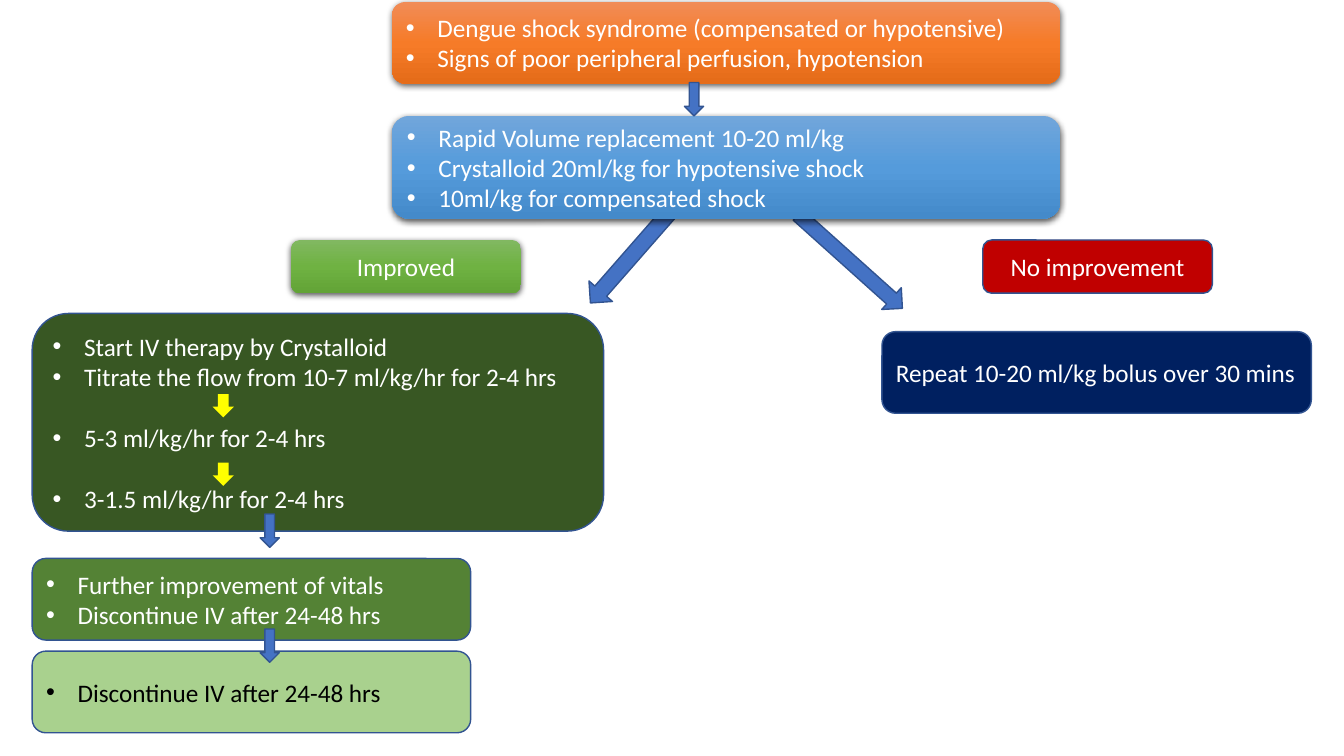
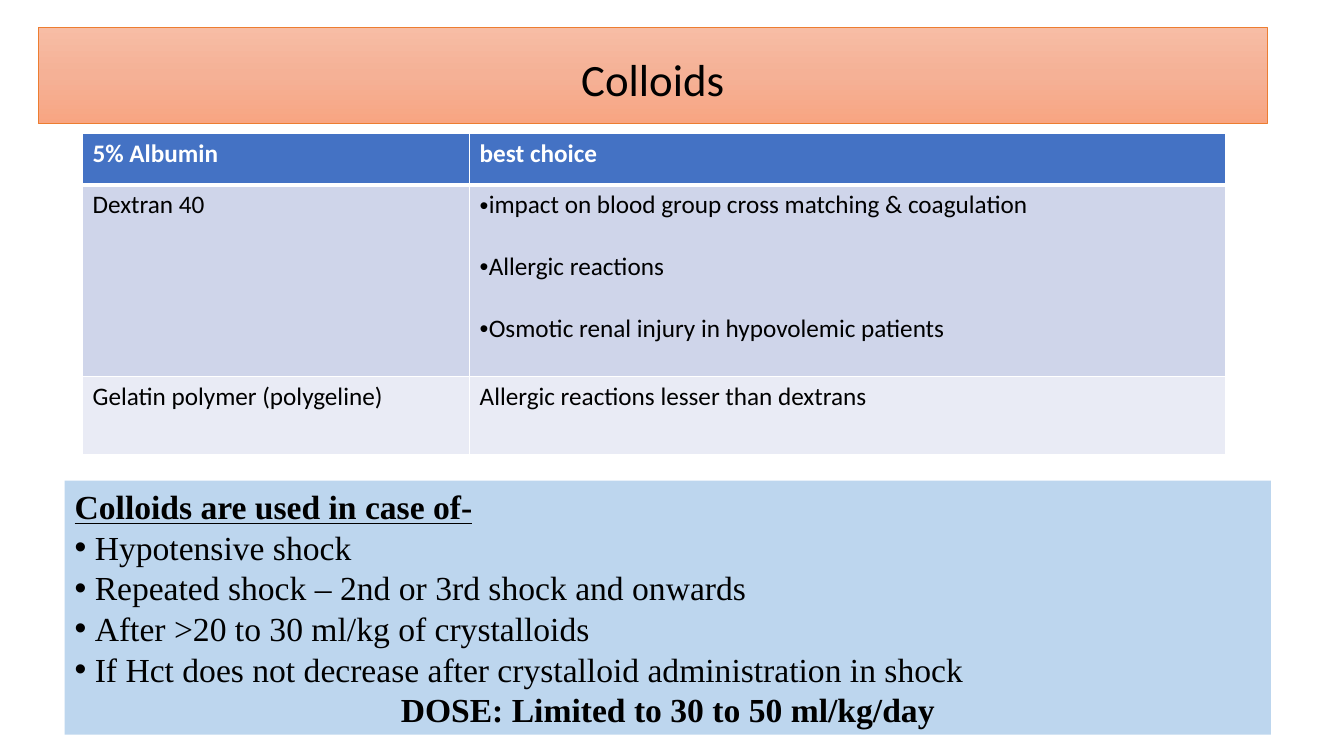
from lxml import etree
from copy import deepcopy
from pptx import Presentation
from pptx.dml.color import RGBColor
from pptx.enum.shapes import MSO_SHAPE
from pptx.enum.text import MSO_ANCHOR, MSO_AUTO_SIZE, PP_ALIGN
from pptx.oxml import parse_xml
from pptx.oxml.ns import qn
from pptx.util import Pt

ROUNDED, DOWN_ARROW = MSO_SHAPE.ROUNDED_RECTANGLE, MSO_SHAPE.DOWN_ARROW
LEFT, CENTER = PP_ALIGN.LEFT, PP_ALIGN.CENTER
MIDDLE, TOP = MSO_ANCHOR.MIDDLE, MSO_ANCHOR.TOP
NO_AUTOFIT = MSO_AUTO_SIZE.NONE

WHITE = RGBColor(0xFF, 0xFF, 0xFF)
BLACK = RGBColor(0x00, 0x00, 0x00)
BLUE = RGBColor(0x44, 0x72, 0xC4)
OUTLINE = RGBColor(0x32, 0x54, 0x91)
YELLOW = RGBColor(0xFF, 0xFF, 0x00)
RED = RGBColor(0xC0, 0x00, 0x00)
NAVY = RGBColor(0x00, 0x20, 0x60)
DARK_GREEN = RGBColor(0x38, 0x57, 0x23)
MID_GREEN = RGBColor(0x54, 0x82, 0x35)
LIGHT_GREEN = RGBColor(0xA9, 0xD1, 0x8E)
PALE_BLUE = RGBColor(0xBD, 0xD6, 0xEE)
BAND_DARK = RGBColor(0xCF, 0xD5, 0xEA)
BAND_LIGHT = RGBColor(0xE9, 0xEB, 0xF5)
ORANGE = RGBColor(0xED, 0x7D, 0x31)
ORANGE_GRADIENT = (RGBColor(0xF1, 0x8C, 0x57), RGBColor(0xF6, 0x7B, 0x28), RGBColor(0xE5, 0x6C, 0x19))
BLUE_GRADIENT = (RGBColor(0x71, 0xA6, 0xDB), RGBColor(0x55, 0x9B, 0xDB), RGBColor(0x44, 0x8A, 0xCA))
GREEN_GRADIENT = (RGBColor(0x81, 0xB8, 0x61), RGBColor(0x6F, 0xB2, 0x42), RGBColor(0x62, 0xA3, 0x36))
PEACH_GRADIENT = (RGBColor(0xF7, 0xBD, 0xA5), RGBColor(0xF5, 0xB1, 0x96), RGBColor(0xF8, 0xA5, 0x82))

STEP_FONT = {"name": "Calibri", "size": Pt(18), "bold": False}
HEADER_FONT = {**STEP_FONT, "bold": True}
TITLE_FONT = {**STEP_FONT, "size": Pt(32)}
USES_FONT = {"name": "Times New Roman", "size": Pt(24), "bold": False}
USES_BOLD = {**USES_FONT, "bold": True}
USES_HEADING = {**USES_BOLD, "underline": True}

STEP_INDENT = 22.5
LINE_GAP = Pt(22)
STEP_HEIGHT = 58.3
LABEL_SIZE = (164, 38)
FLOW_ARROW_SIZE = (13.7, 23.8)
TITRATION_ARROW_SIZE = (15.1, 16.6)

DRAWING_NS = "http://schemas.openxmlformats.org/drawingml/2006/main"
SOFT_SHADOW = (
    f'<a:outerShdw xmlns:a="{DRAWING_NS}" blurRad="57150" dist="19050" dir="5400000" '
    'algn="ctr" rotWithShape="0"><a:srgbClr val="000000"><a:alpha val="63000"/>'
    "</a:srgbClr></a:outerShdw>"
)


def set_all(target, values):
    for name, value in values.items():
        setattr(target, name, value)


def place(shape, box):
    set_all(shape, dict(zip(("left", "top", "width", "height"), map(Pt, box))))


def paint(shape, fill):
    """Fill with one colour, or with a tuple of colours running from top to bottom."""
    if isinstance(fill, RGBColor):
        shape.fill.solid()
        shape.fill.fore_color.rgb = fill
        return
    shape.fill.gradient()
    shape.fill.gradient_angle = 270
    stop_list = shape.element.spPr.find(".//" + qn("a:gsLst"))
    while len(stop_list) < len(fill):
        stop_list.append(deepcopy(stop_list[-1]))
    for index, (stop, color) in enumerate(zip(shape.fill.gradient_stops, fill)):
        stop.position = index / (len(fill) - 1)
        stop.color.rgb = color


def outline(shape, color, width):
    shape.line.color.rgb = color
    shape.line.width = Pt(width)


def add_line(frame, text, font, color=BLACK, bullet_indent=None, **layout):
    """Write one paragraph, using the frame's first one while it is empty."""
    paragraph = frame.paragraphs[0]
    if paragraph.runs:
        paragraph = frame.add_paragraph()
    properties = paragraph._p.get_or_add_pPr()
    indent = Pt(bullet_indent or 0)
    properties.set("marL", str(indent))
    properties.set("indent", str(-indent))
    if bullet_indent is None:
        etree.SubElement(properties, qn("a:buNone"))
    else:
        etree.SubElement(properties, qn("a:buFont")).set("typeface", "Arial")
        etree.SubElement(properties, qn("a:buChar")).set("char", "•")
    set_all(paragraph, {"alignment": LEFT, "space_before": Pt(0), **layout})
    run = paragraph.add_run()
    run.text = text
    set_all(run.font, font)
    run.font.color.rgb = color


def add_step(slide, box, fill, lines, color=WHITE, bullet_indent=STEP_INDENT, gaps=(), align=LEFT):
    """Add a rounded box; lines whose index is in gaps stand one line lower."""
    step = slide.shapes.add_shape(ROUNDED, *map(Pt, box))
    step.shadow.inherit = False
    paint(step, fill)
    if isinstance(fill, RGBColor):
        outline(step, OUTLINE, 1)
    else:
        step.line.fill.background()
        step.element.spPr.find(qn("a:effectLst")).append(parse_xml(SOFT_SHADOW))
    set_all(step.text_frame, {"word_wrap": True, "vertical_anchor": MIDDLE})
    for index, text in enumerate(lines):
        add_line(step.text_frame, text, STEP_FONT, color, bullet_indent,
                 alignment=align, space_before=LINE_GAP if index in gaps else Pt(0))


def add_label(slide, left, top, fill, text):
    add_step(slide, (left, top, *LABEL_SIZE), fill, [text], bullet_indent=None, align=CENTER)


def add_arrow(slide, box, rotation=0, fill=BLUE):
    arrow = slide.shapes.add_shape(DOWN_ARROW, *map(Pt, box))
    arrow.shadow.inherit = False
    arrow.rotation = rotation
    paint(arrow, fill)
    if fill == BLUE:
        outline(arrow, OUTLINE, 1)
    else:
        arrow.line.fill.background()


def add_shock_start(slide, box):
    left, top, width, height = box
    volume_height = 73.4
    volume_top = top + height - volume_height
    add_arrow(slide, (left + 160, volume_top + 55.4, 22.3, 89.3), 41.2)
    add_arrow(slide, (left + 316.9, volume_top + 54, 20.9, 100.1), 311.9)
    add_step(slide, (left, top, width, STEP_HEIGHT), ORANGE_GRADIENT, [
        "Dengue shock syndrome (compensated or hypotensive)",
        "Signs of poor peripheral perfusion, hypotension"])
    add_step(slide, (left, volume_top, width, volume_height), BLUE_GRADIENT, [
        "Rapid Volume replacement 10-20 ml/kg",
        "Crystalloid 20ml/kg for hypotensive shock",
        "10ml/kg for compensated shock"])
    add_arrow(slide, (left + 208.9, volume_top - FLOW_ARROW_SIZE[1], *FLOW_ARROW_SIZE))


def add_improved_branch(slide, box):
    left, top, width, height = box
    narrow = 313.2
    discontinue_top = top + height - STEP_HEIGHT
    add_label(slide, left + 185, top, GREEN_GRADIENT, "Improved")
    add_step(slide, (left, top + 52.5, width, 155.5), DARK_GREEN, [
        "Start IV therapy by Crystalloid",
        "Titrate the flow from 10-7 ml/kg/hr for 2-4 hrs",
        "5-3 ml/kg/hr for 2-4 hrs",
        "3-1.5 ml/kg/hr for 2-4 hrs"], gaps=(2, 3))
    add_step(slide, (left, discontinue_top - 66.2, narrow, STEP_HEIGHT), MID_GREEN, [
        "Further improvement of vitals", "Discontinue IV after 24-48 hrs"])
    add_step(slide, (left, discontinue_top, narrow, STEP_HEIGHT), LIGHT_GREEN,
             ["Discontinue IV after 24-48 hrs"], BLACK)
    for offset in (195.8, 277.9):
        add_arrow(slide, (left + 162.8, top + offset, *FLOW_ARROW_SIZE))
    for offset in (110.1, 159.1):
        add_arrow(slide, (left + 128.9, top + offset, *TITRATION_ARROW_SIZE), fill=YELLOW)


def add_unimproved_branch(slide, box):
    left, top, width, height = box
    add_label(slide, left + 72, top, RED, "No improvement")
    add_step(slide, (left, top + height - STEP_HEIGHT, width, STEP_HEIGHT), NAVY,
             ["Repeat 10-20 ml/kg bolus over 30 mins"], bullet_indent=None)


def add_title_band(slide, box, text):
    title = slide.shapes.title
    place(title, box)
    paint(title, PEACH_GRADIENT)
    outline(title, ORANGE, 0.5)
    set_all(title.text_frame, {"auto_size": NO_AUTOFIT, "vertical_anchor": MIDDLE,
                               "margin_top": Pt(8)})
    add_line(title.text_frame, text, TITLE_FONT, alignment=CENTER)


def set_borders(cell, bottom_width):
    properties = cell._tc.get_or_add_tcPr()
    for side, width in (("L", 1), ("R", 1), ("T", 1), ("B", bottom_width)):
        border = etree.SubElement(properties, qn(f"a:ln{side}"), w=str(Pt(width)))
        border_fill = etree.SubElement(border, qn("a:solidFill"))
        etree.SubElement(border_fill, qn("a:srgbClr"), val=str(WHITE))


def add_colloid_table(slide, box):
    rows = [
        (36.7, BLUE, ["5% Albumin"], ["best choice"]),
        (137, BAND_DARK, ["Dextran 40"], [
            "impact on blood group cross matching & coagulation",
            "Allergic reactions",
            "Osmotic renal injury in hypovolemic patients"]),
        (55.3, BAND_LIGHT, ["Gelatin polymer (polygeline)"],
         ["Allergic reactions lesser than dextrans"]),
    ]
    table = slide.shapes.add_table(len(rows), 2, *map(Pt, box)).table
    table.horz_banding = False
    name_width = 276.5
    for column, width in zip(table.columns, (name_width, box[2] - name_width)):
        column.width = Pt(width)
    for row_index, (height, fill, *contents) in enumerate(rows):
        table.rows[row_index].height = Pt(height)
        is_header = row_index == 0
        for cell, lines in zip(table.rows[row_index].cells, contents):
            set_borders(cell, 3 if is_header else 1)
            cell.fill.solid()
            cell.fill.fore_color.rgb = fill
            for index, text in enumerate(lines):
                add_line(cell.text_frame, text,
                         HEADER_FONT if is_header else STEP_FONT,
                         WHITE if is_header else BLACK,
                         6.5 if len(lines) > 1 else None,
                         space_before=LINE_GAP if index else Pt(0))


def add_colloid_uses(slide, box):
    uses = slide.placeholders[1]
    place(uses, box)
    paint(uses, PALE_BLUE)
    frame = uses.text_frame
    set_all(frame, {"auto_size": NO_AUTOFIT, "vertical_anchor": TOP})
    spacing = {"line_spacing": Pt(29)}
    add_line(frame, "Colloids are used in case of-", USES_HEADING, **spacing)
    for text in ("Hypotensive shock",
                 "Repeated shock – 2nd or 3rd shock and onwards",
                 "After >20 to 30 ml/kg of crystalloids",
                 "If Hct does not decrease after crystalloid administration in shock"):
        add_line(frame, text, USES_FONT, bullet_indent=14.4, **spacing)
    add_line(frame, "DOSE: Limited to 30 to 50 ml/kg/day", USES_BOLD, alignment=CENTER, **spacing)


def build_shock_flow(prs):
    slide = prs.slides.add_slide(prs.slide_layouts[6])
    add_shock_start(slide, (280, 1.4, 477.4, 154.8))
    add_improved_branch(slide, (23, 171.4, 408.2, 352))
    add_unimproved_branch(slide, (630, 171.4, 306.7, 123.8))


def build_colloids(prs):
    slide = prs.slides.add_slide(prs.slide_layouts[1])
    add_title_band(slide, (27.4, 19.4, 877.7, 69.1), "Colloids")
    add_colloid_uses(slide, (46.1, 343.4, 861.8, 181.4))
    add_colloid_table(slide, (59, 95.4, 816.5, 229))


def main():
    prs = Presentation()
    prs.slide_width, prs.slide_height = Pt(960), Pt(540)
    build_shock_flow(prs)
    build_colloids(prs)
    prs.save("out.pptx")


if __name__ == "__main__":
    main()
